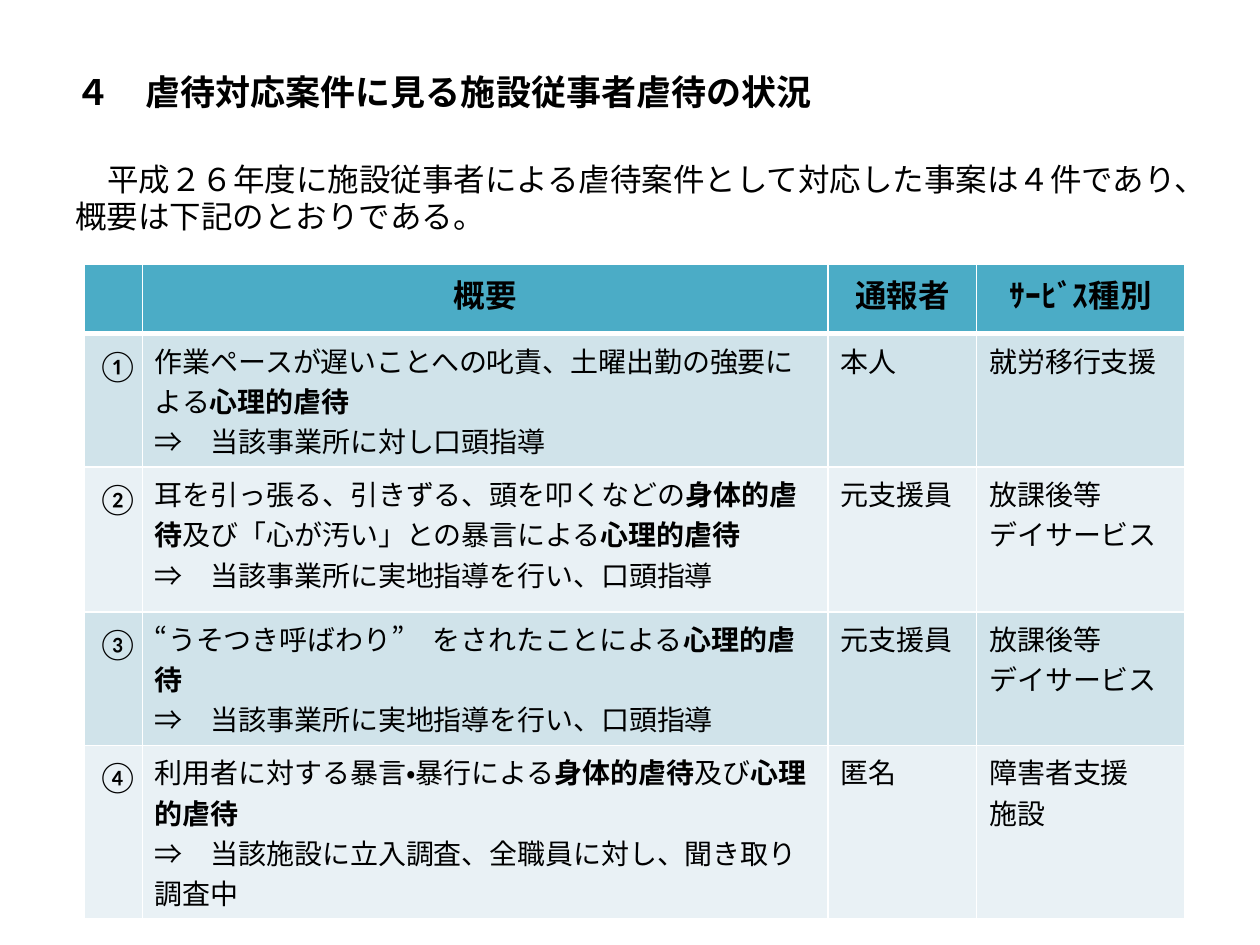
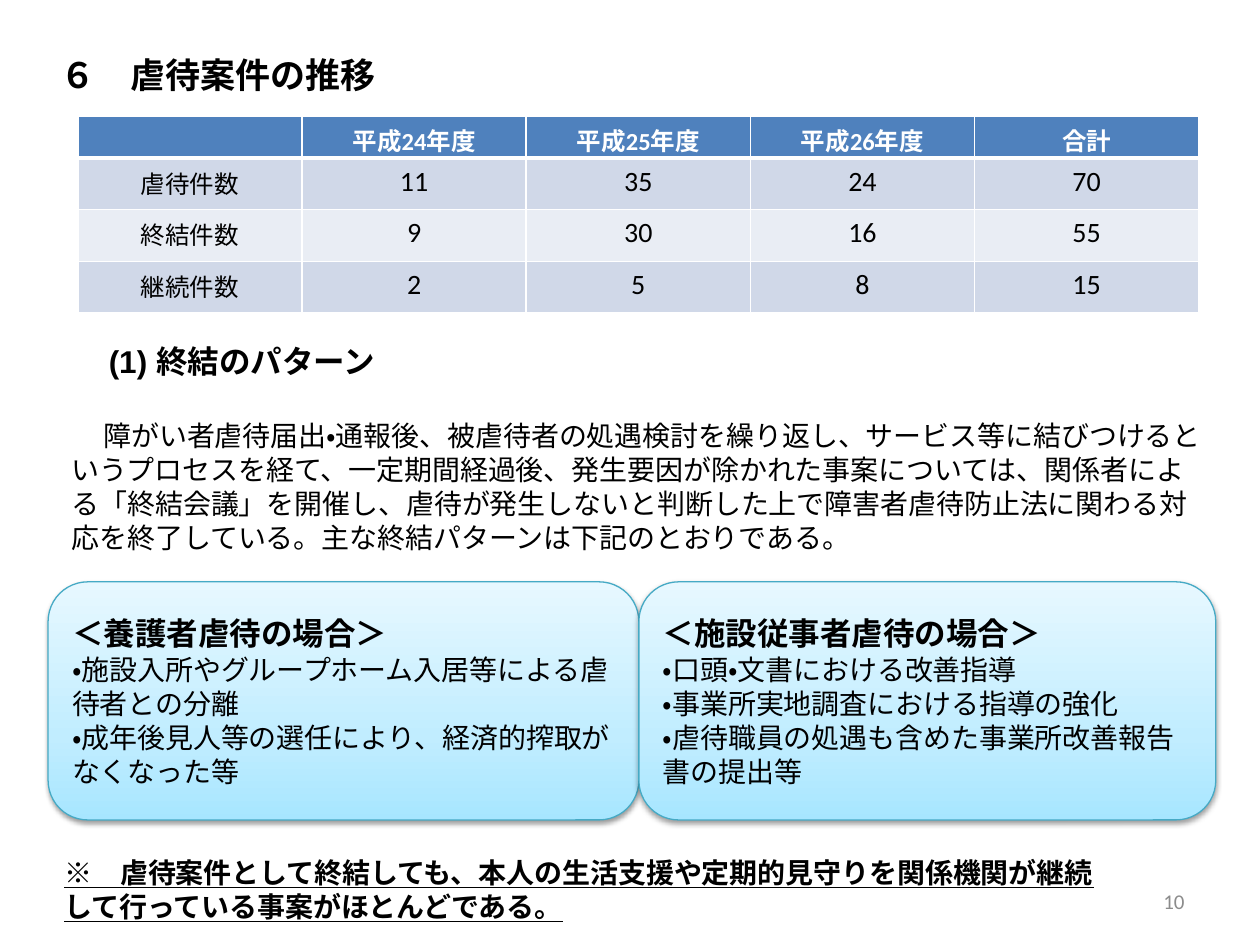
import pptx
import pptx.dml.color
import pptx.enum.lang
import pptx.enum.shapes
import pptx.enum.text
import pptx.oxml
import pptx.oxml.ns
import pptx.util
from dataclasses import dataclass

Cm = pptx.util.Cm
Pt = pptx.util.Pt
ALIGN = pptx.enum.text.PP_ALIGN
ANCHOR = pptx.enum.text.MSO_ANCHOR
ROUNDED = pptx.enum.shapes.MSO_SHAPE.ROUNDED_RECTANGLE
NAMESPACE = pptx.oxml.ns.nsdecls("a")


@dataclass(frozen=True)
class Theme:
    font: str = "Calibri"
    note_font: str = "Arial"
    ink: str = "000000"
    paper: str = "FFFFFF"
    page_grey: str = "8C8C8C"
    case_header: str = "4BACC6"
    case_bands: tuple = ("D0E3EA", "E9F1F5")
    trend_header: str = "4F81BD"
    trend_bands: tuple = ("D0D8E8", "E9EDF4")
    card_line: str = "46AAC5"
    card_stops: tuple = ((0, "A7E6FF"), (35, "C1EDFF"), (100, "E7F8FF"))
    title: int = 20
    heading: int = 18
    body: int = 16
    label: int = 14
    page: int = 12
    tight: float = 1.21
    loose: float = 1.44


THEME = Theme()


def rgb(value):
    return pptx.dml.color.RGBColor.from_string(value)


def write(frame, text, size=THEME.body, font=THEME.font, color=THEME.ink,
          bold=False, underline=False, align=ALIGN.LEFT, leading=None,
          before=0, indent=0):
    """Add one paragraph; ** switches bold on and off."""
    paragraph = frame.paragraphs[0]
    if paragraph.runs:
        paragraph = frame.add_paragraph()
    paragraph.alignment = align
    paragraph.space_before = Pt(before)
    if leading:
        paragraph.line_spacing = Pt(round(size * leading, 1))
    if indent:
        paragraph._p.get_or_add_pPr().set("indent", str(Cm(indent)))
    if not text:
        paragraph._p.get_or_add_endParaRPr().set("sz", str(size * 100))
    for position, piece in enumerate(text.split("**")):
        if piece:
            run = paragraph.add_run()
            run.text = piece
            run.font.size = Pt(size)
            run.font.name = font
            run.font.bold = bold or position % 2 == 1
            run.font.underline = underline
            run.font.color.rgb = rgb(color)
            run.font.language_id = pptx.enum.lang.MSO_LANGUAGE_ID.JAPANESE


def text_area(slide, box, anchor=ANCHOR.MIDDLE):
    frame = slide.shapes.add_textbox(*map(Cm, box)).text_frame
    frame.word_wrap = True
    frame.vertical_anchor = anchor
    return frame


def slide_frame(deck, title, title_box, page):
    """Blank slide with the shared title and page number."""
    slide = deck.slides.add_slide(deck.slide_layouts[6])
    write(text_area(slide, title_box), title, size=THEME.title, bold=True)
    write(text_area(slide, (18.21, 17.65, 5.92, 1.02)), page, size=THEME.page,
          color=THEME.page_grey, align=ALIGN.RIGHT)
    return slide


def paint_cell(cell, fill, is_header):
    """White rules around the cell, then its fill."""
    properties = cell._tc.get_or_add_tcPr()
    for side in "LRTB":
        width = Pt(3 if is_header and side == "B" else 1)
        if side == "T" and not is_header:
            continue  # the rule above belongs to the row above
        properties.append(pptx.oxml.parse_xml(
            f'<a:ln{side} {NAMESPACE} w="{width}"><a:solidFill>'
            f'<a:srgbClr val="{THEME.paper}"/></a:solidFill></a:ln{side}>'))
    cell.fill.solid()
    cell.fill.fore_color.rgb = rgb(fill)


def banded_table(slide, box, widths, heights, rows, header, bands, cell_format):
    """Each cell is a string, one paragraph per line."""
    holder = slide.shapes.add_table(len(rows), len(widths), *map(Cm, box))
    table = holder.table
    for column, width in zip(table.columns, widths):
        column.width = Cm(width)
    for row, height in zip(table.rows, heights):
        row.height = Cm(height)
    for r, row in enumerate(rows):
        for c, text in enumerate(row):
            cell = table.cell(r, c)
            paint_cell(cell, bands[(r - 1) % 2] if r else header, r == 0)
            for line in text.split("\n"):
                write(cell.text_frame, line, **cell_format(r, c))
    holder.height = Cm(box[3])


def rounded_panel(slide, box):
    panel = slide.shapes.add_shape(ROUNDED, *map(Cm, box))
    panel.shadow.inherit = False
    panel.fill.solid()
    panel.fill.fore_color.rgb = rgb(THEME.paper)
    panel.line.fill.background()
    panel.text_frame.word_wrap = True
    panel.text_frame.vertical_anchor = ANCHOR.MIDDLE
    return panel


def pattern_card(slide, box, heading, points):
    """Rounded card with a vertical gradient and a soft shadow."""
    card = rounded_panel(slide, box)
    properties = card._element.spPr
    stops = "".join(f'<a:gs pos="{at * 1000}"><a:srgbClr val="{color}"/></a:gs>'
                    for at, color in THEME.card_stops)
    properties.replace(
        properties.find(pptx.oxml.ns.qn("a:solidFill")),
        pptx.oxml.parse_xml(
            f'<a:gradFill {NAMESPACE} rotWithShape="1"><a:gsLst>{stops}</a:gsLst>'
            '<a:lin ang="16200000" scaled="0"/></a:gradFill>'))
    card.line.color.rgb = rgb(THEME.card_line)
    card.line.width = Pt(0.75)
    properties.find(pptx.oxml.ns.qn("a:effectLst")).append(pptx.oxml.parse_xml(
        f'<a:outerShdw {NAMESPACE} blurRad="{Pt(3.1)}" dist="{Pt(1.6)}" '
        'dir="5400000" rotWithShape="0"><a:srgbClr val="000000">'
        '<a:alpha val="38000"/></a:srgbClr></a:outerShdw>'))
    write(card.text_frame, heading, size=THEME.heading, bold=True,
          leading=THEME.tight)
    for point in points:
        write(card.text_frame, point, leading=THEME.tight)


def case_format(row, column):
    if row == 0:
        return dict(size=THEME.heading, bold=True, align=ALIGN.CENTER)
    size = THEME.heading if column == 0 else THEME.body
    return dict(size=size, leading=THEME.loose)


def trend_format(row, column):
    is_label = row == 0 or column == 0
    return dict(size=THEME.label if is_label else THEME.body, bold=row == 0,
                color=THEME.ink if row else THEME.paper, align=ALIGN.CENTER)


CASES = [
    ("", "概要", "通報者", "ｻｰﾋﾞｽ種別"),
    ("①", "作業ペースが遅いことへの叱責、土曜出勤の強要による**心理的虐待**\n"
     "⇒　当該事業所に対し口頭指導", "本人", "就労移行支援"),
    ("②", "耳を引っ張る、引きずる、頭を叩くなどの**身体的虐待**及び"
     "「心が汚い」との暴言による**心理的虐待**\n"
     "⇒　当該事業所に実地指導を行い、口頭指導", "元支援員", "放課後等\nデイサービス"),
    ("③", "“うそつき呼ばわり”　をされたことによる**心理的虐待**\n"
     "⇒　当該事業所に実地指導を行い、口頭指導", "元支援員", "放課後等\nデイサービス"),
    ("④", "利用者に対する暴言・暴行による**身体的虐待**及び**心理的虐待**\n"
     "⇒　当該施設に立入調査、全職員に対し、聞き取り調査中", "匿名", "障害者支援\n施設"),
]

TRENDS = [
    ("", "平成24年度", "平成25年度", "平成26年度", "合計"),
    ("虐待件数", "11", "35", "24", "70"),
    ("終結件数", "9", "30", "16", "55"),
    ("継続件数", "2", "5", "8", "15"),
]


def case_slide(deck):
    slide = slide_frame(deck, "４　虐待対応案件に見る施設従事者虐待の状況",
                        (1.27, 0.76, 22.86, 2.16), "8")
    # Introduction
    intro = text_area(slide, (1.27, 3.12, 22.86, 13.89), ANCHOR.TOP)
    write(intro, "平成２６年度に施設従事者による虐待案件として対応した事案は４件であり、"
          "概要は下記のとおりである。", size=THEME.heading, leading=1.17, indent=0.64)
    # Cases
    banded_table(slide, (1.7, 5.33, 22.2, 11.25), (1.17, 13.82, 3, 4.19),
                 (1.4, 1.68, 2.92, 1.68, 1.68), CASES,
                 THEME.case_header, THEME.case_bands, case_format)


def trend_slide(deck):
    slide = slide_frame(deck, "６　虐待案件の推移", (0.97, 0.53, 22.86, 1.96), "10")
    # Yearly counts
    banded_table(slide, (1.57, 2.34, 22.6, 3.94), [4.52] * 5,
                 [0.64] + [1.04] * 3, TRENDS,
                 THEME.trend_header, THEME.trend_bands, trend_format)
    # How cases are closed
    closing = rounded_panel(slide, (0.97, 6.73, 23.8, 4.6)).text_frame
    write(closing, "(1) 終結のパターン", size=THEME.heading, font=THEME.note_font,
          bold=True, leading=THEME.tight, indent=0.75)
    write(closing, "障がい者虐待届出・通報後、被虐待者の処遇検討を繰り返し、サービス等に"
          "結びつけるというプロセスを経て、一定期間経過後、発生要因が除かれた事案については、"
          "関係者による「終結会議」を開催し、虐待が発生しないと判断した上で"
          "障害者虐待防止法に関わる対応を終了している。主な終結パターンは下記のとおりである。",
          font=THEME.note_font, leading=THEME.tight, before=22, indent=0.64)
    # Patterns by kind of abuse
    pattern_card(slide, (0.97, 11.73, 11.91, 4.8), "＜養護者虐待の場合＞", (
        "・施設入所やグループホーム入居等による虐待者との分離",
        "・成年後見人等の選任により、経済的搾取がなくなった等"))
    pattern_card(slide, (12.88, 11.73, 11.63, 4.8), "＜施設従事者虐待の場合＞", (
        "・口頭・文書における改善指導",
        "・事業所実地調査における指導の強化",
        "・虐待職員の処遇も含めた事業所改善報告書の提出等"))
    # Closing remark
    remark = rounded_panel(slide, (0.97, 17.12, 21.72, 1.6)).text_frame
    write(remark, "※　虐待案件として終結しても、本人の生活支援や定期的見守りを"
          "関係機関が継続して行っている事案がほとんどである。",
          bold=True, underline=True, leading=THEME.tight)


def main():
    deck = pptx.Presentation()
    deck.slide_width, deck.slide_height = Cm(25.4), Cm(19.05)
    case_slide(deck)
    trend_slide(deck)
    deck.save("out.pptx")


if __name__ == "__main__":
    main()
